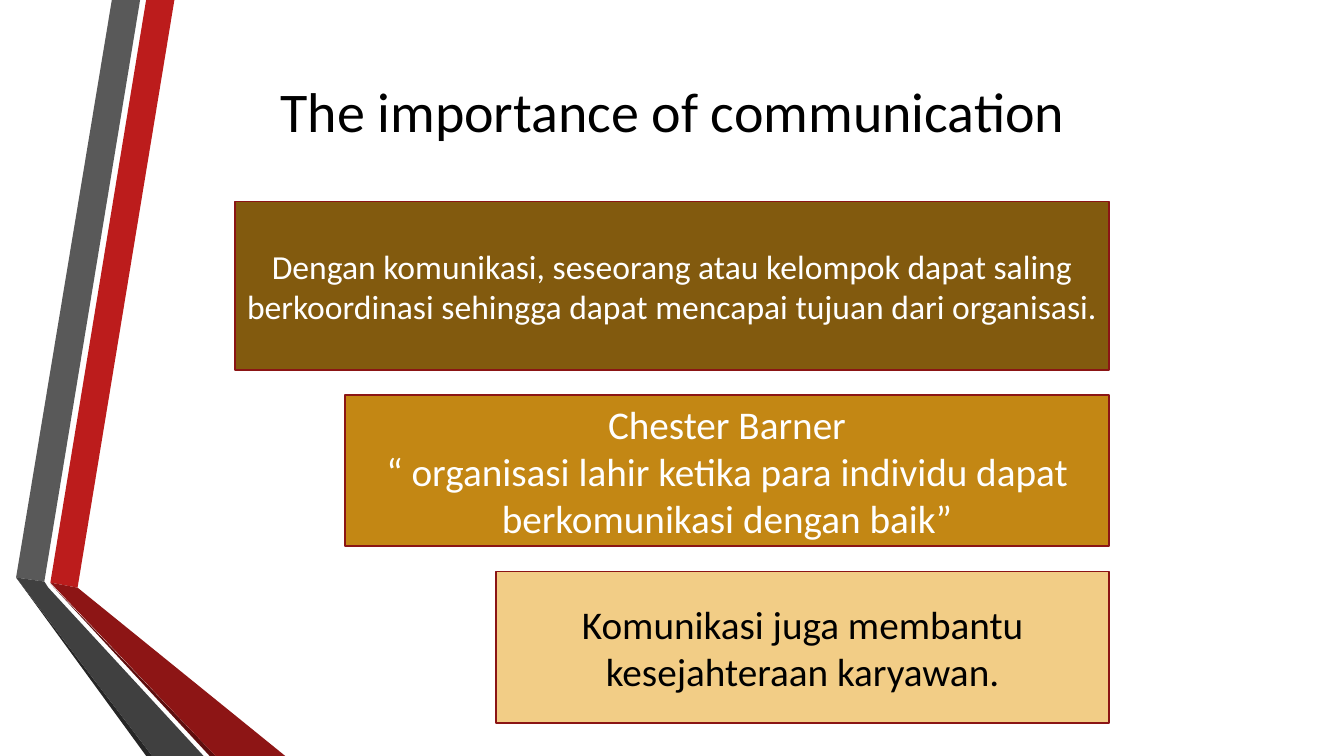
from dataclasses import dataclass

from pptx import Presentation
from pptx.dml.color import RGBColor
from pptx.enum.shapes import MSO_SHAPE
from pptx.enum.text import MSO_ANCHOR, MSO_AUTO_SIZE, PP_ALIGN
from pptx.util import Inches, Pt


@dataclass(frozen=True)
class Theme:
    font: str = "Calibri"
    title_size: int = 40
    quote_size: int = 28
    body_size: int = 24
    black: str = "000000"
    white: str = "FFFFFF"
    border: str = "8B1515"
    brown: str = "825A0E"
    amber: str = "C38714"
    sand: str = "F2CD86"
    red: str = "BC1C1C"
    red_fold: str = "8D1515"
    red_edge: str = "5E0E0E"
    grey: str = "595959"
    grey_fold: str = "404040"
    grey_edge: str = "262626"


THEME = Theme()
STEPS_RIGHT = 11

RIBBONS = [
    (THEME.red, [(0.5, 5.78), (0.77, 5.83), (1.73, 0), (1.45, 0)]),
    (THEME.grey, [(1.39, 0), (1.11, 0), (0.16, 5.73), (0.44, 5.77)]),
    (THEME.grey_edge, [(0.16, 5.73), (1.45, 7.5), (1.51, 7.5)]),
    (THEME.red_edge, [(0.5, 5.79), (2.08, 7.5), (2.14, 7.5)]),
    (THEME.red_fold, [(0.5, 5.78), (2.14, 7.5), (2.83, 7.5), (0.77, 5.83)]),
    (THEME.grey_fold, [(2.02, 7.5), (0.48, 5.83), (0.44, 5.77), (0.16, 5.73), (1.51, 7.5)]),
]

# left, top, height, fill, text colour, text size, paragraphs
STEPS = [
    (2.33, 2, 1.67, THEME.brown, THEME.white, THEME.body_size,
     ["Dengan komunikasi, seseorang atau kelompok dapat saling "
      "berkoordinasi sehingga dapat mencapai tujuan dari organisasi."]),
    (3.42, 3.92, 1.5, THEME.amber, THEME.white, THEME.quote_size,
     ["Chester Barner",
      "“ organisasi lahir ketika para individu dapat berkomunikasi dengan baik”"]),
    (4.92, 5.67, 1.5, THEME.sand, THEME.black, THEME.quote_size,
     ["Komunikasi juga membantu kesejahteraan karyawan."]),
]


def paint(shape, fill, border=None):
    shape.shadow.inherit = False
    shape.fill.solid()
    shape.fill.fore_color.rgb = RGBColor.from_string(fill)
    if border:
        shape.line.color.rgb = RGBColor.from_string(border)
        shape.line.width = Pt(1.25)
    else:
        shape.line.fill.background()


def write(shape, paragraphs, *, size, color, align=PP_ALIGN.CENTER):
    frame = shape.text_frame
    frame.word_wrap = True
    frame.auto_size = MSO_AUTO_SIZE.NONE
    frame.vertical_anchor = MSO_ANCHOR.MIDDLE
    frame.text = "\n".join(paragraphs)
    for paragraph in frame.paragraphs:
        paragraph.alignment = align
        for run in paragraph.runs:
            run.font.name = THEME.font
            run.font.size = Pt(size)
            run.font.color.rgb = RGBColor.from_string(color)


def add_ribbon(slide, fill, corners):
    start, *others = [(Inches(x), Inches(y)) for x, y in corners]
    outline = slide.shapes.build_freeform(*start)
    outline.add_line_segments(others, close=True)
    paint(outline.convert_to_shape(), fill)


def add_title(slide, text):
    title = slide.shapes.title
    title.left, title.top = Inches(2.17), Inches(0.44)
    title.width, title.height = Inches(9), Inches(1.31)
    write(title, [text], size=THEME.title_size, color=THEME.black)


def add_step(slide, left, top, height, fill, color, size, paragraphs):
    """Add a box that ends at the right edge shared by all steps."""
    step = slide.shapes.add_shape(
        MSO_SHAPE.RECTANGLE, Inches(left), Inches(top),
        Inches(STEPS_RIGHT - left), Inches(height))
    paint(step, fill, THEME.border)
    write(step, paragraphs, size=size, color=color)


def main():
    deck = Presentation()
    deck.slide_width, deck.slide_height = Inches(13.33), Inches(7.5)
    slide = deck.slides.add_slide(deck.slide_layouts.get_by_name("Title Only"))
    for ribbon in RIBBONS:
        add_ribbon(slide, *ribbon)
    add_title(slide, "The importance of communication")
    for step in STEPS:
        add_step(slide, *step)
    deck.save("out.pptx")


if __name__ == "__main__":
    main()
